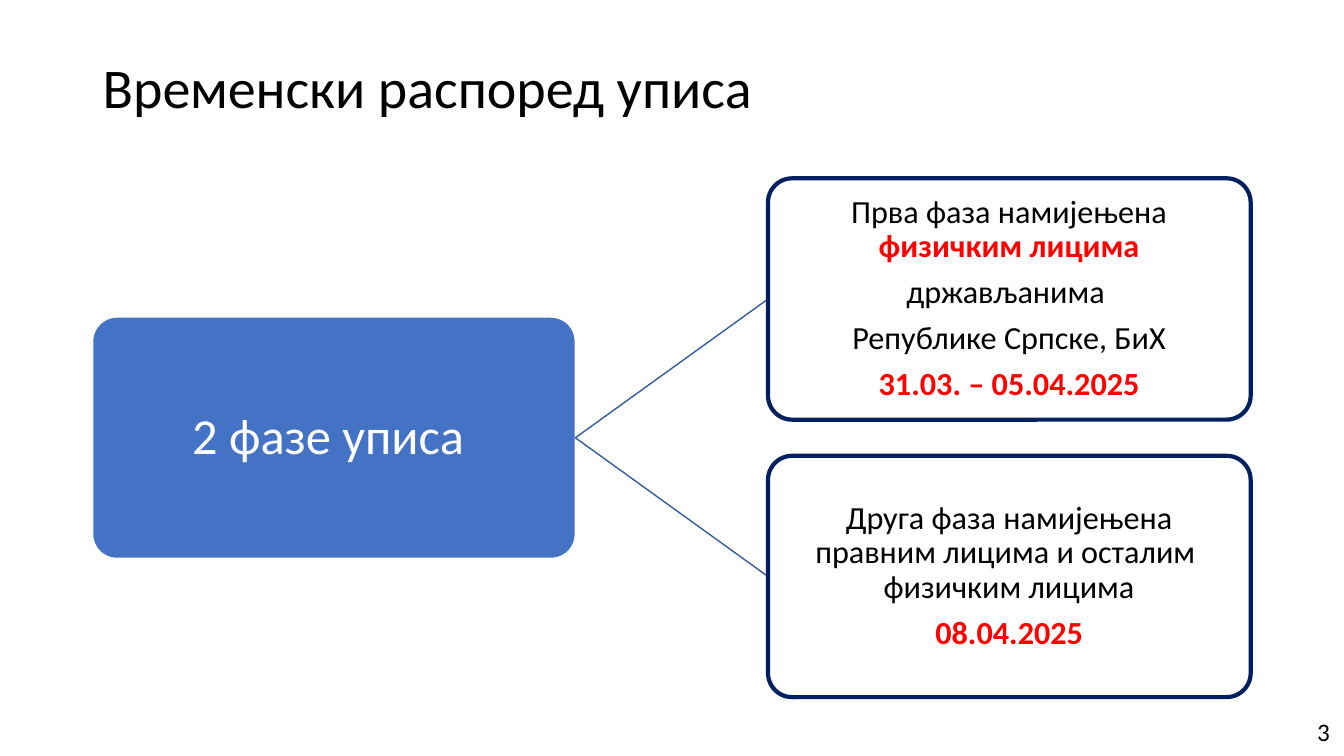
from lxml import etree
from pptx import Presentation
from pptx import util as u
from pptx.dml.color import RGBColor
from pptx.enum import shapes, text
from pptx.oxml import ns

BLACK = RGBColor(0, 0, 0)
WHITE = RGBColor(255, 255, 255)
RED = RGBColor(255, 0, 0)
NAVY = RGBColor(0x00, 0x20, 0x60)
BLUE = RGBColor(0x44, 0x72, 0xC4)
STEEL = RGBColor(0x36, 0x5B, 0x9D)

CARD_W, CARD_H = 344.8, 172.4
LEFT, RIGHT = 66.2, 548.6
TOP, STEP = 127.4, 198.2


class Deck:
    """Hold the style and the current slide, and draw each kind of element."""

    font = "Calibri"

    def __init__(self):
        self.prs = Presentation()
        self.prs.slide_width, self.prs.slide_height = u.Pt(960), u.Pt(540)
        self.slide = self.prs.slides.add_slide(self.prs.slide_layouts[5])

    def style(self, run, size, color, bold=False):
        run.font.name, run.font.size = self.font, u.Pt(size)
        run.font.color.rgb, run.font.bold = color, bold

    def title(self, words, x, y, w, h):
        box = self.slide.shapes.title
        box.left, box.top, box.width, box.height = map(u.Pt, (x, y, w, h))
        frame = box.text_frame
        frame.text = words
        frame.auto_size = text.MSO_AUTO_SIZE.NONE
        frame.vertical_anchor = text.MSO_ANCHOR.MIDDLE
        para = frame.paragraphs[0]
        para.alignment, para.line_spacing = text.PP_ALIGN.LEFT, 0.9
        self.style(para.runs[0], 40, BLACK)

    def card(self, x, y, fill, edge, width, size, pad, paras):
        box = self.slide.shapes.add_shape(
            shapes.MSO_SHAPE.ROUNDED_RECTANGLE,
            *map(u.Pt, (x, y, CARD_W, CARD_H)))
        box.adjustments[0] = 0.1
        box.shadow.inherit = False
        box.fill.solid()
        box.fill.fore_color.rgb = fill
        box.line.color.rgb, box.line.width = edge, u.Pt(width)
        frame = box.text_frame
        frame.word_wrap = True
        frame.vertical_anchor = text.MSO_ANCHOR.MIDDLE
        frame.margin_left = frame.margin_right = u.Pt(pad)
        frame.margin_top = frame.margin_bottom = u.Pt(pad)
        for i, runs in enumerate(paras):
            para = frame.add_paragraph() if i else frame.paragraphs[0]
            para.alignment, para.line_spacing = text.PP_ALIGN.CENTER, 0.9
            para.space_after = u.Pt(round(size * 0.35))
            for words, color in runs:
                run = para.add_run()
                run.text = words
                self.style(run, size, color, color == RED)

    def link(self, x1, y1, x2, y2):
        line = self.slide.shapes.add_connector(
            shapes.MSO_CONNECTOR.STRAIGHT, *map(u.Pt, (x1, y1, x2, y2)))
        line.line.color.rgb, line.line.width = STEEL, u.Pt(1)
        etree.SubElement(line._element.spPr, ns.qn("a:effectLst"))

    def label(self, words, x, y, w, h):
        box = self.slide.shapes.add_textbox(*map(u.Pt, (x, y, w, h)))
        box.text_frame.text = words
        self.style(box.text_frame.paragraphs[0].runs[0], 18, BLACK)


def main():
    deck = Deck()
    deck.title("Временски распоред уписа", LEFT, 28.8, 828, 71.3)
    mid = TOP + STEP / 2
    deck.card(LEFT, mid, BLUE, WHITE, 1, 36, 7.2,
              [[("2 фазе уписа ", WHITE)]])
    phases = [
        [[("Прва фаза намијењена ", BLACK), ("физичким лицима", RED)],
         [("држављанима ", BLACK)],
         [("Републике Српске, БиХ", BLACK)],
         [("31.03. – 05.04.2025", RED)]],
        [[("Друга фаза намијењена правним лицима и осталим  физичким лицима",
           BLACK)],
         [("08.04.2025", RED)]],
    ]
    for i, paras in enumerate(phases):
        top = TOP + i * STEP
        deck.link(LEFT + CARD_W, mid + CARD_H / 2, RIGHT, top + CARD_H / 2)
        deck.card(RIGHT, top, WHITE, NAVY, 3, 23, 6.6, paras)
    deck.label("3", 933.8, 508.3, 18.7, 28.8)
    deck.prs.save("out.pptx")


if __name__ == "__main__":
    main()
